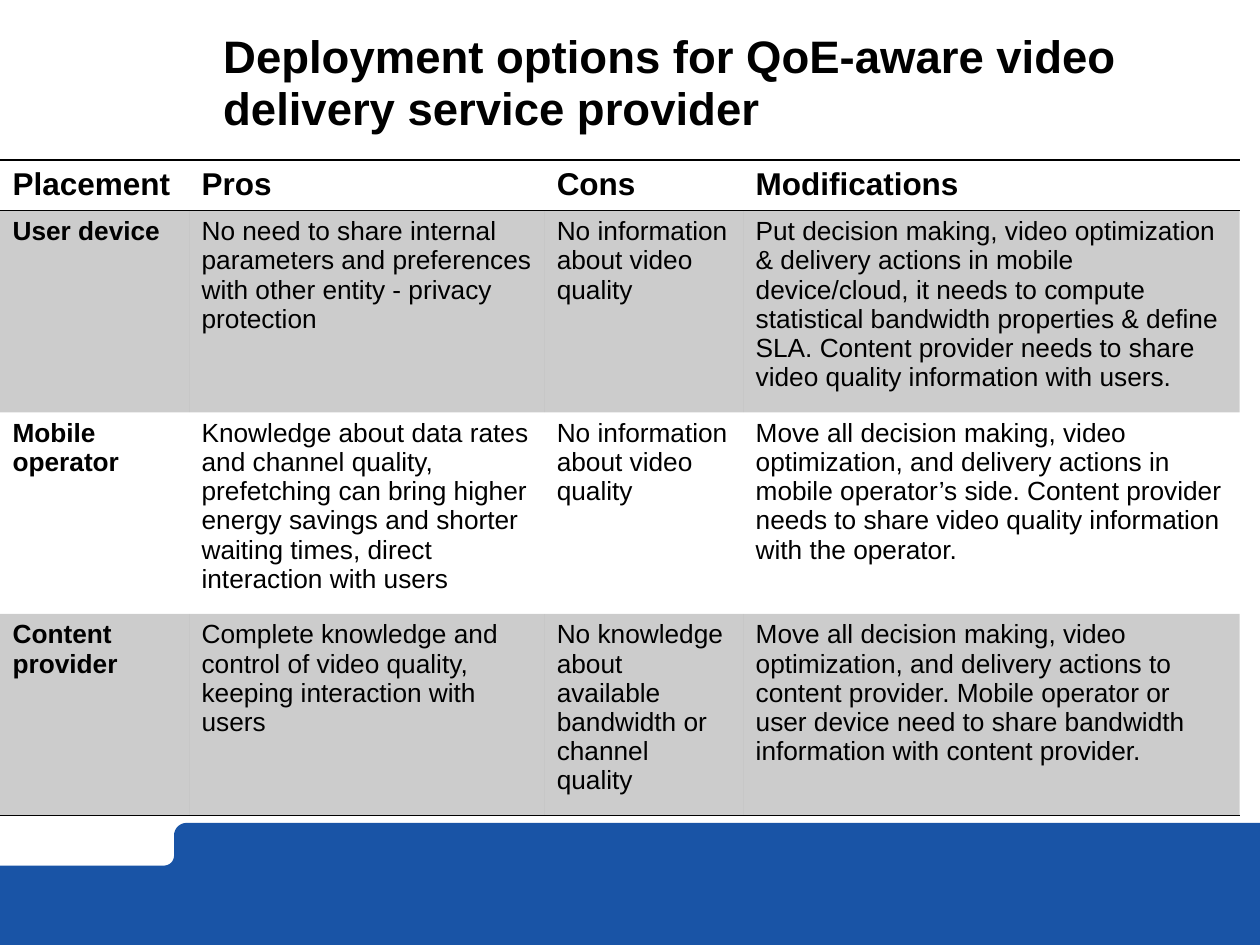
from math import cos, radians, sin

from lxml import etree
from pptx import Presentation
from pptx import util as u
from pptx.dml.color import RGBColor
from pptx.enum import text
from pptx.oxml.ns import qn

BLACK = RGBColor(0x00, 0x00, 0x00)
WHITE = RGBColor(0xFF, 0xFF, 0xFF)
BLUE = RGBColor(0x19, 0x54, 0xA6)
PAGE_WIDTH, PAGE_HEIGHT = 25.4, 19.05
PLAIN_TABLE_STYLE = "{2D5ABB26-0587-4C30-8999-92F81FD0307C}"

COLUMN_WIDTHS = [3.81, 7.16, 4.01, 10.01]
HEADER_HEIGHT, BODY_HEIGHT = 0.97, 3.79
OPTIONS = [
    ["Placement", "Pros", "Cons", "Modifications"],
    ["User device",
     "No need to share internal parameters and preferences with other entity - privacy protection",
     "No information about video quality",
     "Put decision making, video optimization & delivery actions in mobile device/cloud, it needs "
     "to compute statistical bandwidth properties & define SLA. Content provider needs to share "
     "video quality information with users."],
    ["Mobile operator",
     "Knowledge about data rates and channel quality, prefetching can bring higher energy savings "
     "and shorter waiting times, direct interaction with users",
     "No information about video quality",
     "Move all decision making, video optimization, and delivery actions in mobile operator’s side. "
     "Content provider needs to share video quality information with the operator."],
    ["Content provider",
     "Complete knowledge and control of video quality, keeping interaction with users",
     "No knowledge about available bandwidth or channel quality",
     "Move all decision making, video optimization, and delivery actions to content provider. "
     "Mobile operator or user device need to share bandwidth information with content provider."],
]


def arc(x, y, radius, start, end, steps=8):
    """Return points along a circular arc, angles in degrees clockwise from the right."""
    angles = [radians(start + (end - start) * i / steps) for i in range(steps + 1)]
    return [(x + radius * cos(a), y + radius * sin(a)) for a in angles]


class SlideBuilder:
    font_name = "Arial"

    def __init__(self, page):
        self.page = page

    def style(self, para, size, bold):
        font = para.font
        font.name, font.size, font.bold = self.font_name, u.Pt(size), bold
        font.color.rgb = BLACK

    def outline(self, points, color):
        start, *rest = [(u.Cm(x), u.Cm(y)) for x, y in points]
        builder = self.page.shapes.build_freeform(*start)
        builder.add_line_segments(rest, close=True)
        shape = builder.convert_to_shape()
        shape.shadow.inherit = False
        shape.fill.solid()
        shape.fill.fore_color.rgb = color
        shape.line.fill.background()

    def title(self, words, left, top, width, height):
        box = self.page.shapes.add_textbox(*map(u.Cm, (left, top, width, height)))
        frame = box.text_frame
        frame.word_wrap = True
        frame.vertical_anchor = text.MSO_ANCHOR.BOTTOM
        frame.margin_left = frame.margin_top = frame.margin_right = frame.margin_bottom = 0
        para = frame.paragraphs[0]
        para.text = words
        para.line_spacing = u.Pt(30)
        self.style(para, 26, True)

    def shade(self, cell, percent):
        cell.fill.solid()
        cell.fill.fore_color.rgb = BLACK
        color = cell.fill._xPr.find(qn("a:solidFill"))[0]
        etree.SubElement(color, qn("a:alpha"), val=str(percent * 1000))

    def rule(self, cell, sides):
        """Draw black 1 pt borders on the named sides, T before B."""
        properties = cell._tc.get_or_add_tcPr()
        for index, side in enumerate(sides):
            line = etree.Element(qn(f"a:ln{side}"), w=str(u.Pt(1)))
            fill = etree.SubElement(line, qn("a:solidFill"))
            etree.SubElement(fill, qn("a:srgbClr"), val=str(BLACK))
            properties.insert(index, line)

    def table(self, rows, left, top):
        heights = [HEADER_HEIGHT] + [BODY_HEIGHT] * (len(rows) - 1)
        frame = self.page.shapes.add_table(
            len(rows), len(COLUMN_WIDTHS), u.Cm(left), u.Cm(top),
            u.Cm(sum(COLUMN_WIDTHS)), u.Cm(sum(heights)))
        table = frame.table
        table.horz_banding = False
        table._tbl.tblPr.find(qn("a:tableStyleId")).text = PLAIN_TABLE_STYLE
        for column, width in zip(table.columns, COLUMN_WIDTHS):
            column.width = u.Cm(width)
        for r, (row, height) in enumerate(zip(rows, heights)):
            table.rows[r].height = u.Cm(height)
            for c, words in enumerate(row):
                cell = table.cell(r, c)
                cell.text = words
                self.style(cell.text_frame.paragraphs[0], 15 if r else 18, r == 0 or c == 0)
                if r % 2:
                    self.shade(cell, 20)
                else:
                    cell.fill.background()
                if r == 0:
                    self.rule(cell, "TB")
                elif r == len(rows) - 1:
                    self.rule(cell, "B")


def main():
    deck = Presentation()
    deck.slide_width, deck.slide_height = u.Cm(PAGE_WIDTH), u.Cm(PAGE_HEIGHT)
    page = deck.slides.add_slide(deck.slide_layouts[6])
    page.background.fill.solid()
    page.background.fill.fore_color.rgb = WHITE
    builder = SlideBuilder(page)

    step, band_top, shelf_top = 3.51, 16.59, 17.45
    outer, inner = 0.25, 0.2
    builder.outline(
        [(PAGE_WIDTH, band_top), (PAGE_WIDTH, PAGE_HEIGHT), (0, PAGE_HEIGHT), (0, shelf_top)]
        + arc(step - inner, shelf_top - inner, inner, 90, 0)
        + arc(step + outer, band_top + outer, outer, 180, 270),
        BLUE)
    builder.title("Deployment options for QoE-aware video delivery service provider",
                  4.5, 0.38, 19.28, 2.34)
    builder.table(OPTIONS, 0, 3.23)
    deck.save("out.pptx")


if __name__ == "__main__":
    main()
